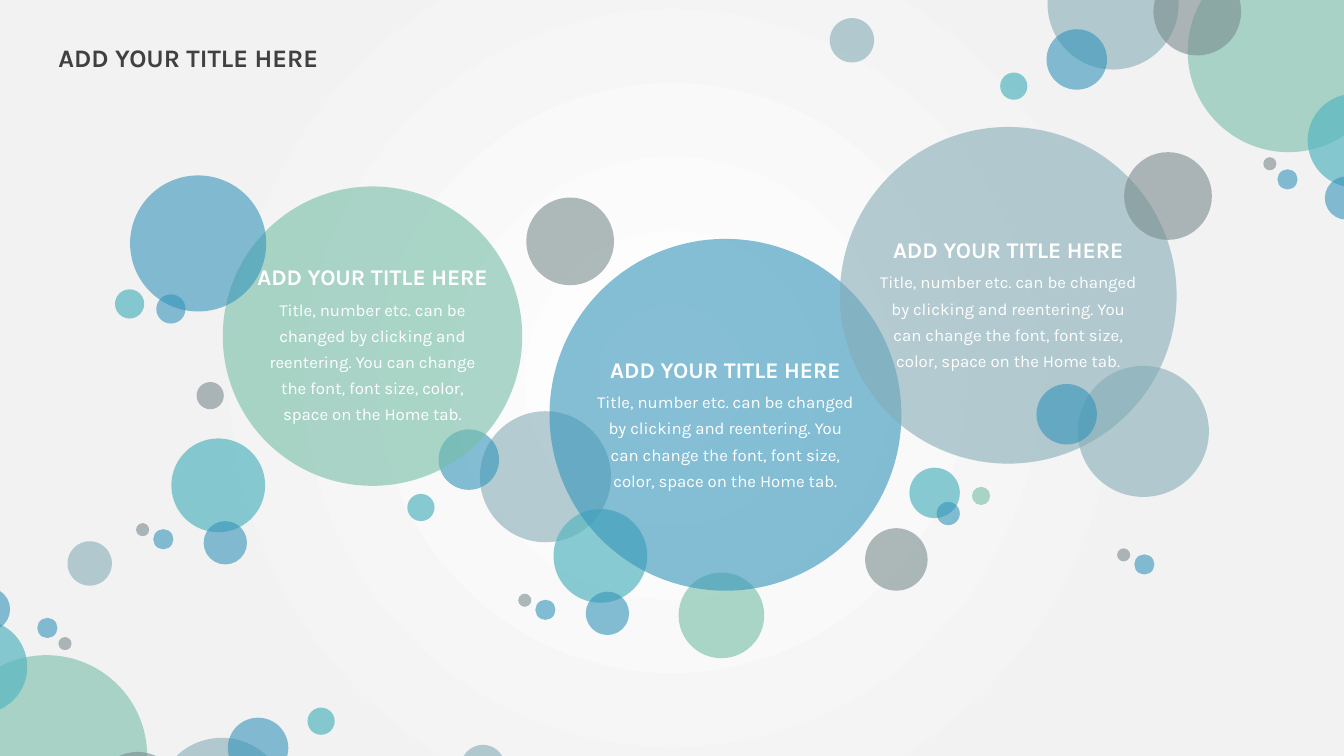
from dataclasses import dataclass
from lxml import etree
from pptx import Presentation
from pptx.dml import color as dml
from pptx.enum import shapes, text
from pptx.oxml import ns
from pptx.util import Inches, Pt


@dataclass(frozen=True)
class Theme:
    font: str = "Karla"
    dark: str = "404040"
    white: str = "FFFFFF"
    edge: str = "F2F2F2"
    mist: str = "84ACB6"
    green: str = "75BDA7"
    gray: str = "7A8C8E"
    blue: str = "3494BA"
    teal: str = "58B6C0"
    head: int = 18
    name: int = 16
    body: int = 12
    lead: float = 1.3


T = Theme()
TITLE = "ADD YOUR TITLE HERE"
BODY = ("Title, number etc. can be changed by clicking and reentering. "
        "You can change the font, font size, color, space on the Home tab.")

# Dot sets: left, top, diameter, colour
CORNER = [
    (10.39, -0.61, 1.3, T.mist), (11.78, -0.49, 2, T.green),
    (11.44, -0.32, 0.87, T.gray), (10.38, 0.29, 0.6, T.blue),
    (12.97, 0.93, 0.93, T.teal), (9.92, 0.72, 0.27, T.teal),
    (13.14, 1.75, 0.43, T.blue), (12.67, 1.68, 0.2, T.blue),
    (12.53, 1.56, 0.13, T.gray), (8.23, 0.18, 0.44, T.mist),
]
TRIO = [(0, 0, 1.3, T.mist), (0.46, -2.12, 0.87, T.gray),
        (-0.41, 0.18, 0.6, T.blue)]
PAIR = [(0, 0, 0.2, T.blue), (-0.17, -0.06, 0.13, T.gray)]
DROPS = [(0, 0, 0.93, T.teal), (0.32, 0.82, 0.43, T.blue)]
LOW = [
    (4.04, 4.9, 0.27, T.teal), (6.73, 5.68, 0.85, T.green),
    (0.67, 5.37, 0.44, T.mist), (9.02, 4.64, 0.5, T.teal),
    (8.58, 5.24, 0.62, T.gray), (9.29, 4.98, 0.23, T.blue),
    (9.64, 4.83, 0.18, T.green),
]
LEFT = [
    (1.95, 3.79, 0.27, T.gray), (1.29, 1.74, 1.35, T.blue),
    (1.55, 2.92, 0.29, T.blue), (1.14, 2.87, 0.29, T.teal),
]


def dot(slide, x, y, size, hue):
    """Draw one see-through circle without outline."""
    disc = slide.shapes.add_shape(
        shapes.MSO_SHAPE.OVAL, Inches(x), Inches(y), Inches(size), Inches(size))
    disc.shadow.inherit = False
    disc.line.fill.background()
    disc.fill.solid()
    disc.fill.fore_color.rgb = dml.RGBColor.from_string(hue)
    tint = disc.fill._xPr.find(".//" + ns.qn("a:srgbClr"))
    alpha = etree.SubElement(tint, ns.qn("a:alpha"))
    alpha.set("val", "70000" if hue == T.teal else "60000")


def dots(slide, items, x=0, y=0):
    """Draw a set of circles, shifted by x and y."""
    for left, top, size, hue in items:
        dot(slide, x + left, y + top, size, hue)


def label(slide, box, words, size, hue, bold=False, align=text.PP_ALIGN.CENTER):
    """Place one wrapped paragraph in a box."""
    frame = slide.shapes.add_textbox(*map(Inches, box)).text_frame
    frame.word_wrap = True
    para = frame.paragraphs[0]
    para.text = words
    para.alignment = align
    para.line_spacing = T.lead
    para.font.name = T.font
    para.font.size = Pt(size)
    para.font.bold = bold
    para.font.color.rgb = dml.RGBColor.from_string(hue)


def bubble(slide, x, y, size, hue, drop, width):
    """Draw a large circle with a title and text centred across it."""
    dot(slide, x, y, size, hue)
    mid, top = x + size / 2, y + drop
    label(slide, (mid - width / 2, top + 0.38, width, 1.4), BODY, T.body, T.white)
    label(slide, (mid - 1.39, top, 2.78, 0.41), TITLE, T.name, T.white, True)


def cluster(slide, x, y):
    """Draw a teal circle with smaller ones below it."""
    dots(slide, DROPS, x, y)
    dots(slide, PAIR, x - 0.18, y + 0.9)


def backdrop(slide):
    """Fill the background with a round gradient from the centre."""
    fill = slide.background.fill
    fill.gradient()
    grad = fill._xPr.find(ns.qn("a:gradFill"))
    for part in list(grad):
        grad.remove(part)
    stops = etree.SubElement(grad, ns.qn("a:gsLst"))
    for pos, hue in ((0, T.white), (67, T.edge), (100, T.edge)):
        stop = etree.SubElement(stops, ns.qn("a:gs"), pos=str(pos * 1000))
        etree.SubElement(stop, ns.qn("a:srgbClr"), val=hue)
    ring = etree.SubElement(grad, ns.qn("a:path"), path="circle")
    etree.SubElement(ring, ns.qn("a:fillToRect"),
                     {side: "50000" for side in "ltrb"})


def corners(slide):
    """Draw the top right dots and the same set turned by half a circle."""
    dots(slide, CORNER)
    dots(slide, [(13.24 - x - size, 8.01 - y - size, size, hue)
                 for x, y, size, hue in CORNER])


def main():
    deck = Presentation()
    deck.slide_width, deck.slide_height = Inches(13.33), Inches(7.5)
    slide = deck.slides.add_slide(deck.slide_layouts[6])

    # Backdrop and heading
    backdrop(slide)
    corners(slide)
    label(slide, (0.48, 0.28, 3.72, 0.44), TITLE, T.head, T.dark, True,
          text.PP_ALIGN.LEFT)

    # Left and middle bubbles over their dots
    dots(slide, TRIO, 4.76, 4.08)
    cluster(slide, 5.49, 5.05)
    dots(slide, LOW)
    bubble(slide, 2.21, 1.85, 2.97, T.green, 0.63, 2.46)
    bubble(slide, 5.45, 2.37, 3.49, T.blue, 1.03, 2.79)
    cluster(slide, 1.7, 4.35)
    dots(slide, LEFT)

    # Right bubble with dots on top
    bubble(slide, 8.33, 1.26, 3.34, T.mist, 0.95, 2.79)
    dots(slide, TRIO, 10.69, 3.63)
    dots(slide, PAIR, 11.25, 5.5)

    deck.save("out.pptx")


if __name__ == "__main__":
    main()
